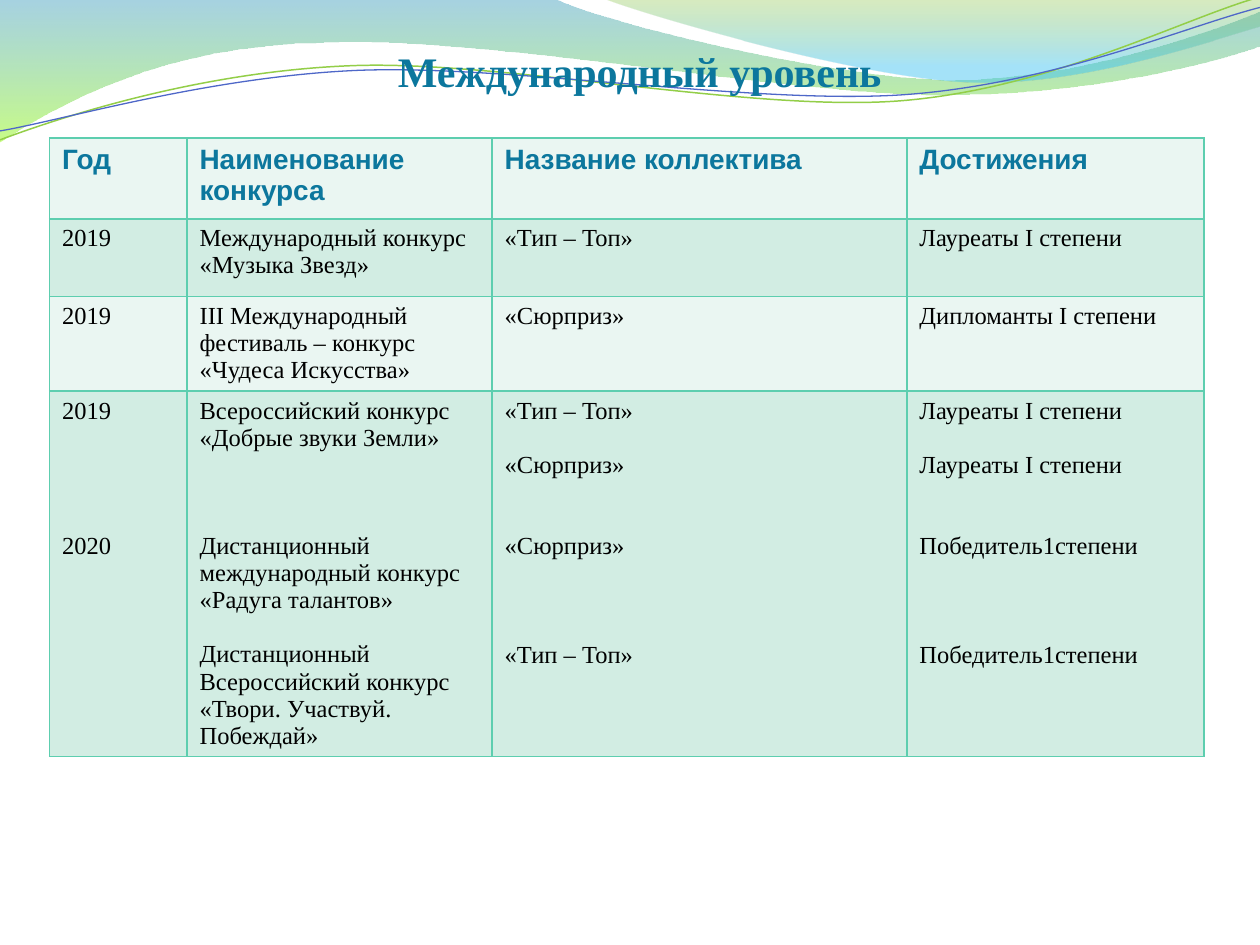
"""Builds a slide with a table of international contest results."""
from lxml.etree import SubElement
from pptx import Presentation
from pptx.dml.color import RGBColor
from pptx.enum.text import MSO_ANCHOR, MSO_AUTO_SIZE, PP_ALIGN
from pptx.oxml.ns import qn
from pptx.util import Cm, Pt

HUES = {
    "title": "0C779D", "text": "000000", "edge": "5DCEAF",
    "pale": "EAF6F2", "mint": "D2EDE3",
    "blue": "3B9CBF", "lime": "9CFA24", "leaf": "7EBE2C", "sky": "39C1F1",
    "green": "93CE48", "indigo": "4E67C8",
}
LEAD = 15.5
TILT = 357.3

WAVES = [
    ([(0, -0.03), (11.18, -0.03), (12.09, 0.43, 16.87, 1.6, 19.25, 1.6),
      (21.67, 1.6, 24.33, 0.66, 25.4, 0.23), (25.43, 0.91),
      (24.97, 1.12, 22.1, 1.93, 18.95, 1.91),
      (15.8, 1.91, 9.7, 0.71, 6.53, 0.86),
      (3.28, 0.89, 1.17, 2.11, -0.03, 2.87)],
     [("blue", 0, 45), ("lime", 1, 55)]),
    ([(12.17, -0.03), (12.93, 0.28, 17.32, 1.57, 19.53, 1.65),
      (21.74, 1.75, 24.41, 0.81, 25.4, 0.53), (25.4, 0)],
     [("leaf", 0, 30), ("sky", 0.8, 45)]),
]
LINES = [
    ([(-0.05, 2.22), (1.19, 1.82, 4.02, 1.04, 7.05, 1.06),
      (10.05, 1.07, 15.02, 2.37, 18.08, 2.29),
      (21.13, 2.2, 23.87, 0.91, 25.41, 0.55)], "green", 0.85),
    ([(-0.04, 2.04), (1.16, 1.9, 4.18, 1.15, 7.2, 1.16),
      (10.25, 1.18, 15.13, 2.23, 18.18, 2.17),
      (21.21, 2.1, 23.93, 1.06, 25.45, 0.75)], "indigo", 0.75),
]

COLS = [2.77, 6.15, 8.36, 5.99]
ROWS = [1.63, 1.57, 1.9, 7.37]
CELLS = [
    ["Год", "Наименование конкурса", "Название коллектива", "Достижения"],
    ["2019", "Международный конкурс «Музыка Звезд»", "«Тип – Топ»",
     "Лауреаты I степени"],
    ["2019", "III Международный фестиваль – конкурс «Чудеса Искусства»",
     "«Сюрприз»", "Дипломанты I степени"],
    ["2019\n2020",
     "Всероссийский конкурс «Добрые звуки Земли»\n"
     "Дистанционный международный конкурс «Радуга талантов»\n"
     "Дистанционный Всероссийский конкурс «Твори. Участвуй. Побеждай»",
     "«Тип – Топ»\n«Сюрприз»\n«Сюрприз»\n«Тип – Топ»",
     "Лауреаты I степени\nЛауреаты I степени\n"
     "Победитель1степени\nПобедитель1степени"],
]
GAPS = [(0, 4), (0, 3, 1), (0, 1, 2, 3), (0, 1, 2, 3)]


def hue(name):
    return RGBColor.from_string(HUES[name])


def style(para, face, size, name, bold):
    for run in para.runs:
        run.font.name = face
        run.font.size = Pt(size)
        run.font.bold = bold
        run.font.color.rgb = hue(name)


def bend(shape, steps):
    """Turns the straight segments of curved steps into cubic curves."""
    parts = list(shape.element.iter(qn("a:lnTo")))
    for part, step in zip(parts, steps[1:]):
        if len(step) == 2:
            continue
        part.tag = qn("a:cubicBezTo")
        part.remove(part[0])
        for x, y in zip(step[::2], step[1::2]):
            SubElement(part, qn("a:pt"), x=str(Cm(x) - shape.left),
                       y=str(Cm(y) - shape.top))


def add_path(slide, steps, close):
    dots = [(Cm(step[-2]), Cm(step[-1])) for step in steps]
    pen = slide.shapes.build_freeform(*dots[0])
    pen.add_line_segments(dots[1:], close=close)
    shape = pen.convert_to_shape()
    bend(shape, steps)
    shape.shadow.inherit = False
    return shape


def add_wave(slide, steps, stops):
    shape = add_path(slide, steps, True)
    shape.line.fill.background()
    shape.fill.gradient()
    shape.fill.gradient_angle = 270
    for stop, (name, place, _) in zip(shape.fill.gradient_stops, stops):
        stop.color.rgb = hue(name)
        stop.position = place
    tints = list(shape.element.iter(qn("a:srgbClr")))
    for tint, (_, _, alpha) in zip(tints, stops):
        SubElement(tint, qn("a:alpha"), val=str(alpha * 1000))


def add_line(slide, steps, name, width):
    shape = add_path(slide, steps, False)
    shape.rotation = TILT
    shape.fill.background()
    shape.line.color.rgb = hue(name)
    shape.line.width = Pt(width)


def add_edge(cell):
    props = cell._tc.get_or_add_tcPr()
    for i, side in enumerate(("lnL", "lnR", "lnT", "lnB")):
        line = SubElement(props, qn("a:" + side), w=str(Pt(1)))
        fill = SubElement(line, qn("a:solidFill"))
        SubElement(fill, qn("a:srgbClr"), val=HUES["edge"])
        props.insert(i, line)


def fill_cell(cell, text, gaps, head, tint):
    cell.text_frame.text = text
    for para, gap in zip(cell.text_frame.paragraphs, gaps):
        if gap:
            para.space_before = Pt(gap * LEAD)
        if head:
            style(para, "Arial", 16, "title", True)
        else:
            style(para, "Times New Roman", 14, "text", False)
    cell.fill.solid()
    cell.fill.fore_color.rgb = hue(tint)
    add_edge(cell)


def add_grid(slide):
    frame = slide.shapes.add_table(len(ROWS), len(COLS), Cm(1), Cm(2.78),
                                   Cm(sum(COLS)), Cm(sum(ROWS)))
    grid = frame.table
    grid.first_row = grid.horz_banding = False
    for col, width in zip(grid.columns, COLS):
        col.width = Cm(width)
    for r, (row, high) in enumerate(zip(grid.rows, ROWS)):
        row.height = Cm(high)
        tint = "mint" if r % 2 else "pale"
        for c, text in enumerate(CELLS[r]):
            fill_cell(grid.cell(r, c), text, GAPS[c], r == 0, tint)


def set_title(slide, text):
    title = slide.shapes.title
    title.left, title.top = Cm(6.15), Cm(0.79)
    title.width, title.height = Cm(13.49), Cm(1.19)
    frame = title.text_frame
    frame.text = text
    frame.word_wrap = True
    frame.auto_size = MSO_AUTO_SIZE.NONE
    frame.vertical_anchor = MSO_ANCHOR.TOP
    frame.margin_top = Cm(0.13)
    para = frame.paragraphs[0]
    para.alignment = PP_ALIGN.CENTER
    para.space_before = Pt(0)
    style(para, "Times New Roman", 24, "title", True)
    slide.shapes.element.append(title.element)


def main():
    deck = Presentation()
    deck.slide_width, deck.slide_height = Cm(25.4), Cm(19.05)
    slide = deck.slides.add_slide(deck.slide_layouts[5])
    for wave in WAVES:
        add_wave(slide, *wave)
    for line in LINES:
        add_line(slide, *line)
    add_grid(slide)
    set_title(slide, "Международный уровень")
    deck.save("out.pptx")


if __name__ == "__main__":
    main()
